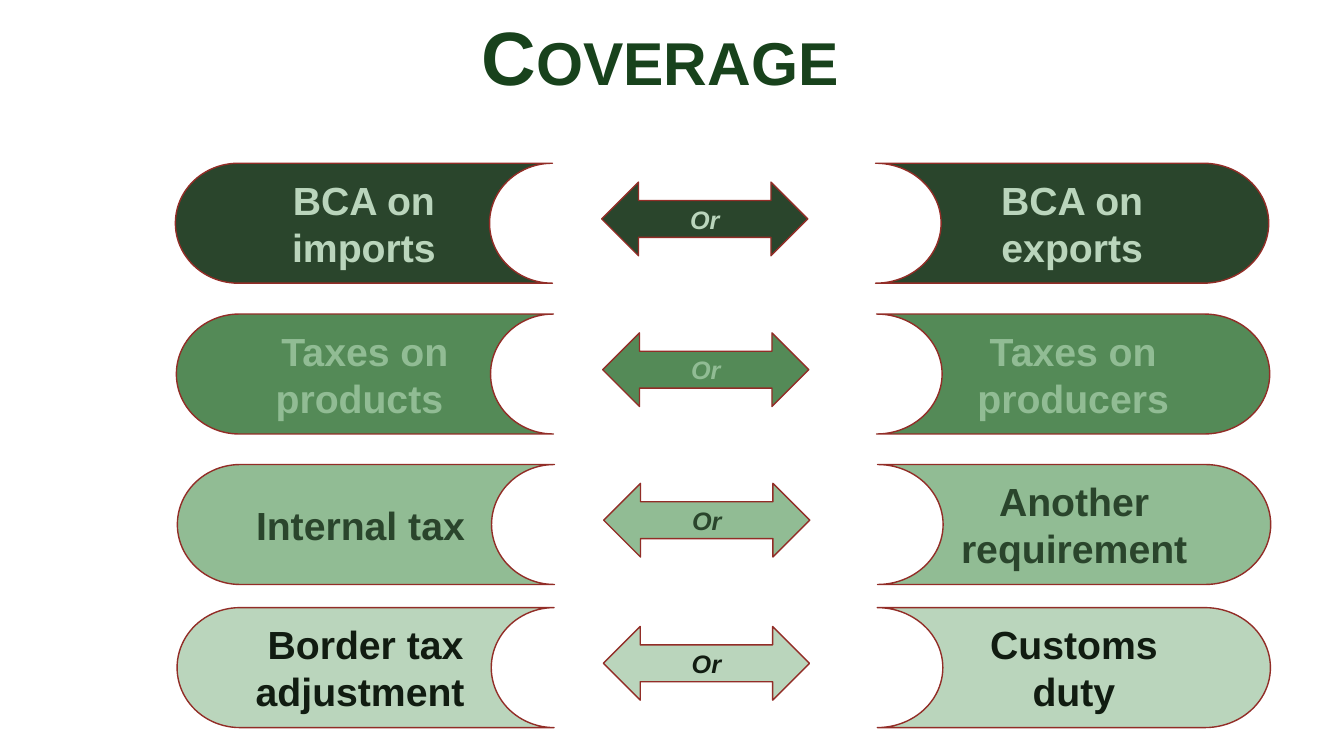
"""Builds the Coverage slide: four pairs of options joined by arrows."""
import pptx
import pptx.dml.color
import pptx.enum.shapes
import pptx.enum.text
import pptx.util

Pt = pptx.util.Pt
RGBColor = pptx.dml.color.RGBColor
MSO_SHAPE = pptx.enum.shapes.MSO_SHAPE

TITLE_GREEN = RGBColor(0x18, 0x42, 0x1C)
BLACK_GREEN = RGBColor(0x11, 0x1C, 0x11)
DARK_GREEN = RGBColor(0x2A, 0x45, 0x2C)
MID_GREEN = RGBColor(0x54, 0x8A, 0x57)
SOFT_GREEN = RGBColor(0x91, 0xBC, 0x94)
PALE_GREEN = RGBColor(0xBA, 0xD5, 0xBC)
OUTLINE_RED = RGBColor(0x92, 0x2D, 0x27)

ROWS = [
    (125.3, 116.6, DARK_GREEN, PALE_GREEN, "BCA on imports", "BCA on exports"),
    (126, 224.3, MID_GREEN, SOFT_GREEN, "Taxes on products ", "Taxes on producers"),
    (126.7, 331.8, SOFT_GREEN, DARK_GREEN, "Internal tax ", "Another requirement"),
    (126.5, 434, PALE_GREEN, BLACK_GREEN, "Border tax adjustment ", "Customs duty"),
]


class CoverageSlide:
    """Holds the slide and its shared style."""

    def __init__(self, slide, font_name="Arial"):
        self.shapes = slide.shapes
        self.font_name = font_name

    def label(self, frame, text, size, color, italic=False):
        """Puts one centred bold paragraph in a text frame."""
        frame.word_wrap = True
        frame.vertical_anchor = pptx.enum.text.MSO_ANCHOR.MIDDLE
        paragraph = frame.paragraphs[0]
        paragraph.text = text
        paragraph.alignment = pptx.enum.text.PP_ALIGN.CENTER
        font = paragraph.font
        font.name = self.font_name
        font.size = Pt(size)
        font.bold = True
        font.italic = italic
        font.color.rgb = color
        return paragraph

    def title(self, text):
        """Adds the heading in small capitals."""
        heading = self.shapes.add_textbox(Pt(1.4), Pt(1.4), Pt(940.3), Pt(84.2))
        paragraph = self.label(heading.text_frame, text, 54, TITLE_GREEN)
        paragraph.line_spacing = 0.9
        paragraph.runs[0].font._element.set("cap", "small")

    def block(self, kind, box, fill, text, size, color, italic=False):
        """Adds an outlined shape with a label."""
        block = self.shapes.add_shape(kind, *map(Pt, box))
        block.shadow.inherit = False
        block.fill.solid()
        block.fill.fore_color.rgb = fill
        block.line.color.rgb = OUTLINE_RED
        block.line.width = Pt(1)
        self.label(block.text_frame, text, size, color, italic)
        return block

    def option(self, left, top, width, fill, text, color, mirrored=False):
        """Adds one option, mirrored on the right side."""
        option = self.block(MSO_SHAPE.FLOWCHART_STORED_DATA,
                            (left, top, width, 85.7), fill, text, 28, color)
        if mirrored:
            option._element.spPr.xfrm.set("flipH", "1")

    def pair(self, left, top, fill, color, first, second):
        """Adds two options with an arrow between them."""
        self.option(left, top, 269.3, fill, first, color)
        self.option(left + 500.2, top, 280.8, fill, second, color, mirrored=True)
        self.block(MSO_SHAPE.LEFT_RIGHT_ARROW, (left + 304.5, top + 13.5, 147.2, 52.6),
                   fill, "Or", 18, color, italic=True)


def main():
    """Builds and saves the deck."""
    deck = pptx.Presentation()
    deck.slide_width = Pt(960)
    deck.slide_height = Pt(540)
    coverage = CoverageSlide(deck.slides.add_slide(deck.slide_layouts[6]))
    coverage.title("Coverage")
    for row in ROWS:
        coverage.pair(*row)
    deck.save("out.pptx")


if __name__ == "__main__":
    main()
